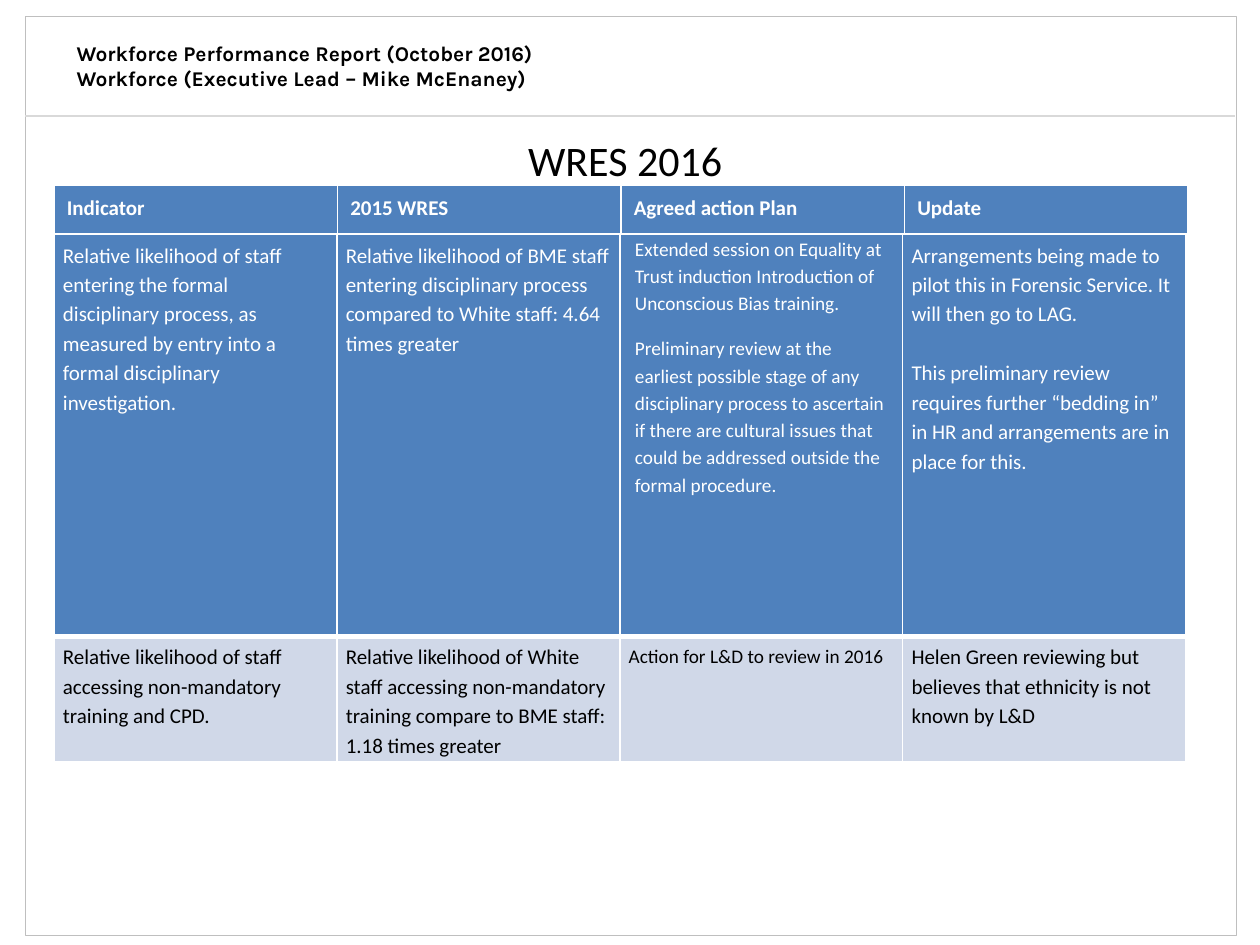
from dataclasses import dataclass
from lxml import etree
from pptx import Presentation
from pptx.dml.color import RGBColor as RGB
from pptx.enum.shapes import MSO_CONNECTOR as Conn, MSO_SHAPE as Shape
from pptx.enum.text import MSO_ANCHOR as Anchor, PP_ALIGN as Align
from pptx.oxml.ns import qn
from pptx.util import Inches, Pt


@dataclass(frozen=True)
class Theme:
    head_font: str = "Karla"
    body_font: str = "Calibri"
    black: str = "000000"
    white: str = "FFFFFF"
    blue: str = "4F81BD"
    pale: str = "D0D8E8"
    frame: str = "BFBFBF"
    rule: str = "D9D9D9"
    title: int = 24
    body: int = 12
    small: int = 11
    spacing: float = 1.15


T = Theme()
WIDTH, HEIGHT = Inches(10), Inches(7.5)
COLUMNS = 4
MARGINS = (0.07, 0.04)
HEAD_MARGINS = (0.1, 0.05)
WIDE_MARGINS = (0.12, 0)
BLANK_LINE = 16.85  # points, one line of body text

HEADER = ["Workforce Performance Report (October 2016)",
          "Workforce (Executive Lead – Mike McEnaney)"]
HEADINGS = ["Indicator", "2015 WRES", "Agreed action Plan", "Update"]
DISCIPLINARY = [
    ["Relative likelihood of staff entering the formal disciplinary process, as",
     "measured by entry into a formal disciplinary investigation."],
    ["Relative likelihood of BME staff entering disciplinary process compared "
     "to White staff: 4.64 times greater"],
    ["Extended session on Equality at Trust induction Introduction of "
     "Unconscious Bias training.",
     "Preliminary review at the earliest possible stage of any disciplinary "
     "process to ascertain if there are cultural issues that could be "
     "addressed outside the formal procedure."],
    ["Arrangements being made to pilot this in Forensic Service. It will then "
     "go to LAG.",
     "This preliminary review requires further “bedding in” in HR and "
     "arrangements are in place for this."],
]
TRAINING = [
    ["Relative likelihood of staff accessing non-mandatory training and CPD."],
    ["Relative likelihood of White staff accessing non-mandatory training "
     "compare to BME staff: 1.18 times greater"],
    ["Action for L&D to review in 2016"],
    ["Helen Green reviewing but believes that ethnicity is not known by L&D"],
]


def px(percent):
    return int(WIDTH * percent / 100)


def py(percent):
    return int(HEIGHT * percent / 100)


def area(left, top, width, height):
    """Percentages of the slide, as lengths."""
    return px(left), py(top), px(width), py(height)


def add_run(p, text, size, color, font=T.body_font, bold=False):
    r = p.add_run()
    r.text = text
    r.font.name, r.font.size, r.font.bold = font, Pt(size), bold
    r.font.color.rgb = RGB.from_string(color)


def add_text_box(s, box):
    tf = s.shapes.add_textbox(*box).text_frame
    tf.word_wrap = True
    return tf


def style_line(line, color, width):
    line.color.rgb = RGB.from_string(color)
    line.width = Pt(width)


def add_frame(s):
    sp = s.shapes.add_shape(Shape.RECTANGLE, *area(2, 1.73, 96.1, 97.2))
    sp.shadow.inherit = False
    sp.fill.background()
    style_line(sp.line, T.frame, 0.25)


def add_rule(s):
    y = py(12.27)
    sp = s.shapes.add_connector(Conn.STRAIGHT, px(2), y, px(98), y)
    style_line(sp.line, T.rule, 0.75)
    etree.SubElement(sp._element.spPr, qn("a:effectLst"))


def set_borders(cell, bottom):
    tc_pr = cell._tc.get_or_add_tcPr()
    for side, width in zip("LRTB", (1, 1, 1, bottom)):
        ln = etree.SubElement(tc_pr, qn(f"a:ln{side}"), w=str(Pt(width)))
        fill = etree.SubElement(ln, qn("a:solidFill"))
        etree.SubElement(fill, qn("a:srgbClr"), val=T.white)


def fill_cell(cell, texts, fill, color, size=T.body, margins=MARGINS,
              bottom=1, bold=False, before=0, after=0):
    set_borders(cell, bottom)
    cell.fill.solid()
    cell.fill.fore_color.rgb = RGB.from_string(fill)
    cell.margin_left = cell.margin_right = Inches(margins[0])
    cell.margin_top = cell.margin_bottom = Inches(margins[1])
    tf = cell.text_frame
    for i, text in enumerate(texts):
        p = tf.add_paragraph() if i else tf.paragraphs[0]
        p.line_spacing = T.spacing
        p.space_before = Pt(before if i else 0)
        p.space_after = Pt(after)
        add_run(p, text, size, color, bold=bold)


def add_grid(s, left, top, width, heights):
    box = area(left, top, width, sum(heights))
    table = s.shapes.add_table(len(heights), COLUMNS, *box).table
    table.first_row = table.horz_banding = False
    for column in table.columns:
        column.width = px(width / COLUMNS)
    for row, height in zip(table.rows, heights):
        row.height = py(height)
    return table


def add_heading_table(s):
    table = add_grid(s, 4.3, 19.6, 90, [5.33])
    for c, text in enumerate(HEADINGS):
        fill_cell(table.cell(0, c), [text], T.blue, T.white,
                  margins=HEAD_MARGINS, bottom=3, bold=True)


def add_indicator_table(s):
    table = add_grid(s, 4.3, 24.8, 89.8, [42.53, 13.2])
    # Cells that differ from the plain body style, by column
    special = {2: dict(size=T.small, margins=WIDE_MARGINS, after=10),
               3: dict(before=BLANK_LINE)}
    for c, texts in enumerate(DISCIPLINARY):
        fill_cell(table.cell(0, c), texts, T.blue, T.white, bottom=3,
                  **special.get(c, {}))
    for c, texts in enumerate(TRAINING):
        fill_cell(table.cell(1, c), texts, T.pale, T.black,
                  size=T.small if c == 2 else T.body)


def add_header(s):
    p = add_text_box(s, area(5.1, 3.6, 50, 6.67)).paragraphs[0]
    for i, text in enumerate(HEADER):
        if i:
            p.add_line_break()
        add_run(p, text, T.body, T.black, T.head_font, bold=True)


def add_title(s):
    tf = add_text_box(s, area(5, 13.2, 90, 7.47))
    tf.vertical_anchor = Anchor.MIDDLE
    p = tf.paragraphs[0]
    p.alignment = Align.CENTER
    add_run(p, "WRES 2016 ", T.title, T.black)


def main():
    prs = Presentation()
    prs.slide_width, prs.slide_height = WIDTH, HEIGHT
    s = prs.slides.add_slide(prs.slide_layouts[6])
    # Page furniture
    add_header(s)
    add_frame(s)
    add_rule(s)
    # Content
    add_title(s)
    add_heading_table(s)
    add_indicator_table(s)
    prs.save("out.pptx")


if __name__ == "__main__":
    main()
